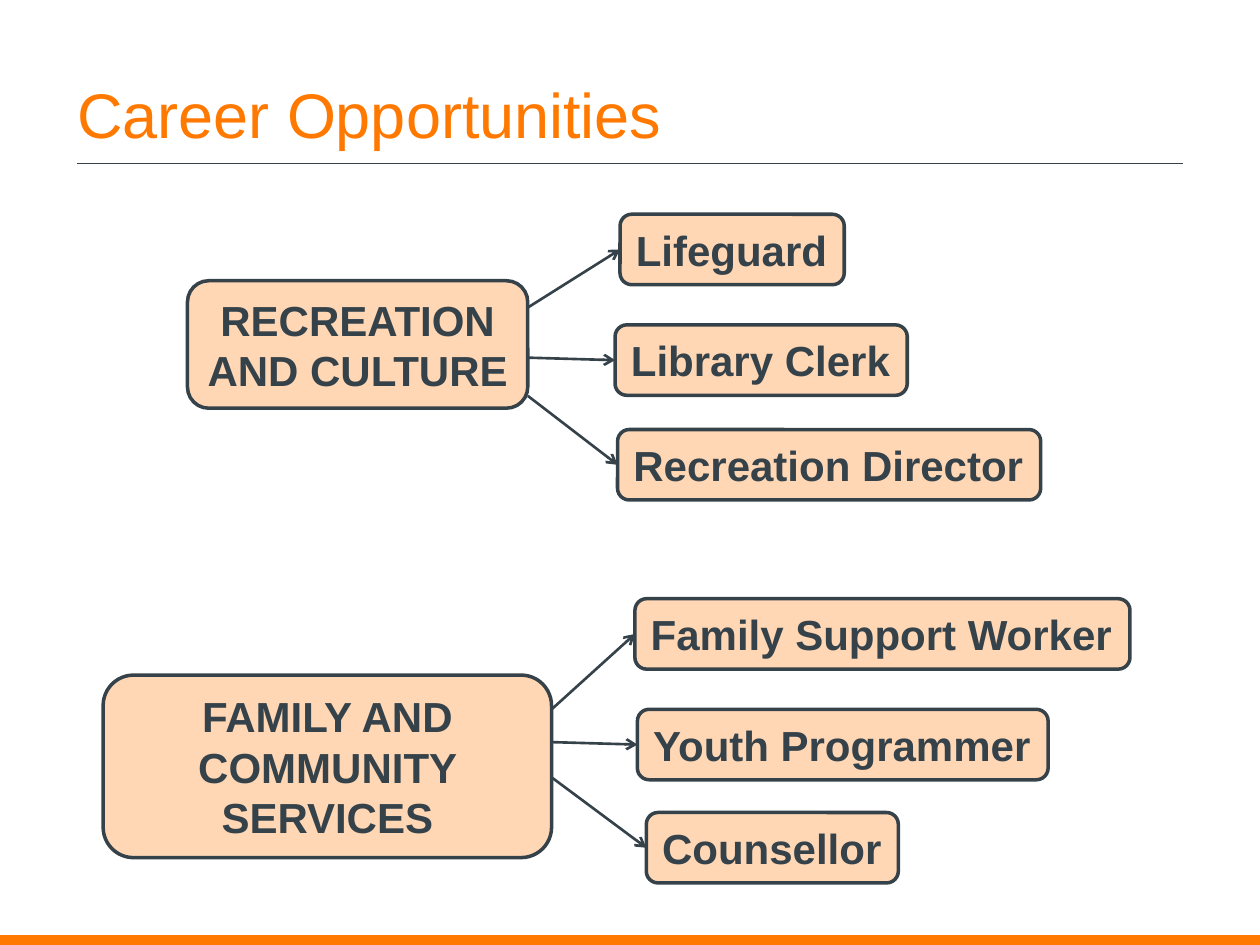
from dataclasses import dataclass

from lxml.etree import SubElement
from pptx import Presentation
from pptx.dml.color import RGBColor
from pptx.enum.shapes import MSO_CONNECTOR, MSO_SHAPE
from pptx.enum.text import MSO_ANCHOR, MSO_AUTO_SIZE, PP_ALIGN
from pptx.oxml.ns import qn
from pptx.shapes.autoshape import Shape
from pptx.shapes.connector import Connector
from pptx.slide import Slide
from pptx.util import Cm, Pt


@dataclass(frozen=True)
class Theme:
    font: str = "Arial"
    accent: RGBColor = RGBColor(0xFF, 0x79, 0x00)
    ink: RGBColor = RGBColor(0x36, 0x42, 0x4A)
    peach: RGBColor = RGBColor(0xFF, 0xD7, 0xB5)
    title: int = 36
    label: int = 24
    border: float = 2
    arrow: float = 1.5
    rule: float = 0.75


@dataclass(frozen=True)
class Box:
    text: str
    left: float
    top: float
    width: float
    height: float = 1.42


@dataclass(frozen=True)
class Job:
    box: Box
    start: float  # height at which its arrow leaves the field box


@dataclass(frozen=True)
class Field:
    box: Box
    jobs: tuple[Job, ...]


THEME = Theme()
FIELDS = (
    Field(Box("RECREATION AND CULTURE", 3.78, 5.66, 6.86, 2.57), (
        Job(Box("Lifeguard", 12.5, 4.32, 4.52), 6.2),
        Job(Box("Library Clerk", 12.4, 6.55, 5.89), 7.21),
        Job(Box("Recreation Director", 12.45, 8.66, 8.53), 7.98),
    )),
    Field(Box("FAMILY AND COMMUNITY SERVICES", 2.08, 13.61, 9.04, 3.68), (
        Job(Box("Family Support Worker", 12.8, 12.07, 9.98), 14.3),
        Job(Box("Youth Programmer", 12.85, 14.3, 8.28), 14.96),
        Job(Box("Counsellor", 13.03, 16.38, 5.08), 15.67),
    )),
)


def write(shape: Shape, text: str, *, size: int, color: RGBColor,
          bold: bool = False, align: PP_ALIGN = PP_ALIGN.LEFT,
          anchor: MSO_ANCHOR = MSO_ANCHOR.MIDDLE, wrap: bool = True,
          fit: MSO_AUTO_SIZE = MSO_AUTO_SIZE.NONE) -> None:
    frame = shape.text_frame
    frame.text = text
    frame.auto_size = fit
    frame.word_wrap = wrap
    frame.vertical_anchor = anchor
    para = frame.paragraphs[0]
    para.alignment = align
    font = para.runs[0].font
    font.name, font.size, font.bold = THEME.font, Pt(size), bold
    font.color.rgb = color


def add_box(slide: Slide, box: Box, align: PP_ALIGN, wrap: bool) -> Shape:
    shape = slide.shapes.add_shape(
        MSO_SHAPE.ROUNDED_RECTANGLE,
        Cm(box.left), Cm(box.top), Cm(box.width), Cm(box.height))
    shape.shadow.inherit = False
    shape.fill.solid()
    shape.fill.fore_color.rgb = THEME.peach
    shape.line.color.rgb = THEME.ink
    shape.line.width = Pt(THEME.border)
    write(shape, box.text, size=THEME.label, color=THEME.ink, bold=True,
          align=align, wrap=wrap, fit=MSO_AUTO_SIZE.SHAPE_TO_FIT_TEXT)
    return shape


def add_line(slide: Slide, x1: float, y1: float, x2: float, y2: float,
             width: float) -> Connector:
    line = slide.shapes.add_connector(
        MSO_CONNECTOR.STRAIGHT, Cm(x1), Cm(y1), Cm(x2), Cm(y2))
    line.line.color.rgb = THEME.ink
    line.line.width = Pt(width)
    SubElement(line._element.spPr, qn("a:effectLst"))
    return line


def add_arrow(slide: Slide, x: float, y: float, box: Box, goal: Shape) -> None:
    """Point from (x, y) to the middle of the goal's left side."""
    arrow = add_line(slide, x, y, box.left, box.top + box.height / 2,
                     THEME.arrow)
    arrow.end_connect(goal, 1)
    SubElement(arrow.line._get_or_add_ln(), qn("a:tailEnd"), type="arrow")


def add_field(slide: Slide, field: Field) -> None:
    box = field.box
    add_box(slide, box, PP_ALIGN.CENTER, True)
    for job in field.jobs:
        goal = add_box(slide, job.box, PP_ALIGN.LEFT, False)
        add_arrow(slide, box.left + box.width, job.start, job.box, goal)


def add_frame(slide: Slide) -> None:
    """Place the title, the rule under it and the bottom band."""
    title = slide.shapes.title
    title.left, title.top = Cm(1.3), Cm(0.64)
    title.width, title.height = Cm(22.83), Cm(2.54)
    write(title, "Career Opportunities", size=THEME.title,
          color=THEME.accent, anchor=MSO_ANCHOR.BOTTOM)
    add_line(slide, 1.55, 3.3, 23.85, 3.3, THEME.rule)
    band = slide.shapes.add_shape(
        MSO_SHAPE.RECTANGLE, Cm(0), Cm(18.85), Cm(25.4), Cm(0.2))
    band.shadow.inherit = False
    band.fill.solid()
    band.fill.fore_color.rgb = THEME.accent
    band.line.fill.background()


def main() -> None:
    deck = Presentation()
    deck.slide_width, deck.slide_height = Cm(25.4), Cm(19.05)
    slide = deck.slides.add_slide(deck.slide_layouts[5])
    add_frame(slide)
    for field in FIELDS:
        add_field(slide, field)
    deck.save("out.pptx")


if __name__ == "__main__":
    main()
